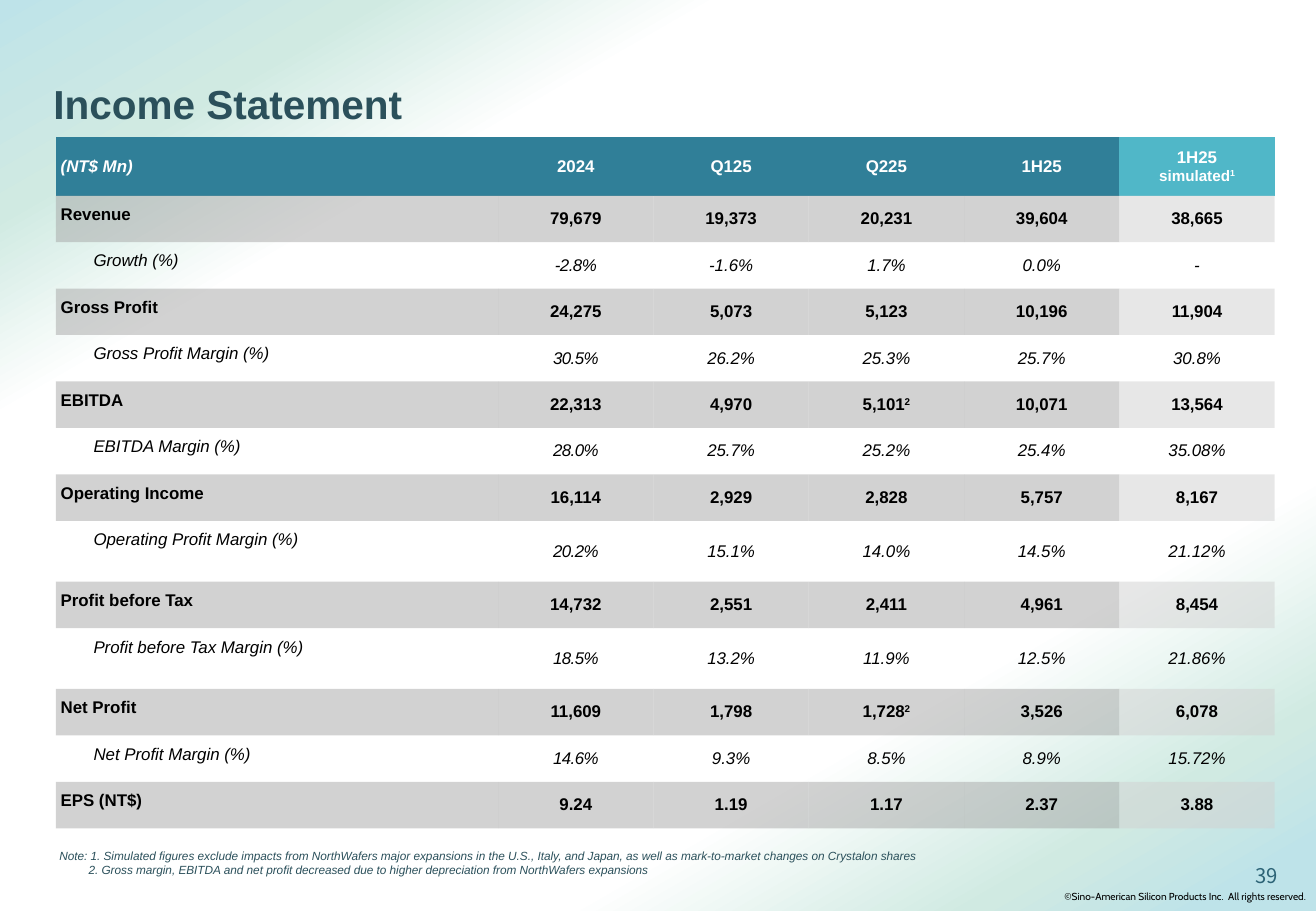
from dataclasses import dataclass

from lxml.etree import SubElement
from pptx import Presentation
from pptx.dml.color import RGBColor
from pptx.enum.shapes import MSO_SHAPE
from pptx.enum.text import MSO_ANCHOR as Anchor, MSO_AUTO_SIZE as AutoSize, PP_ALIGN as Align
from pptx.oxml.ns import qn
from pptx.util import Emu, Pt

EMU_PER_PX = 9144
SLIDE_SIZE = (1083, 750)


@dataclass(frozen=True)
class Theme:
    font: str = "Arial"
    number_font: str = "Noto Sans CJK SC"
    copyright_font: str = "Cabin"
    ink: str = "2B505B"
    number_ink: str = "2C6376"
    black: str = "000000"
    white: str = "FFFFFF"
    header: str = "307F98"
    header_accent: str = "50B7C8"
    band: str = "A6A6A6"
    band_accent: str = "D1D1D1"
    title_size: int = 24
    number_size: int = 12
    table_size: int = 10
    simulated_size: int = 9
    note_size: int = 7
    copyright_size: int = 6
    gradient: tuple = ((0, "BEE3E9"), (13, "D0EAE2"), (25, "FFFFFF"),
                       (74, "FFFFFF"), (88, "D0EAE2"), (96, "BEE3E9"))


THEME = Theme()
PLAIN_TABLE_STYLE = "{2D5ABB26-0587-4C30-8999-92F81FD0307C}"
TABLE_BOX = (46, 113, 1003, 569)
LABEL_WIDTH = 364
HEADER_HEIGHT, TALL_HEIGHT = 48, 50
TALL_ROWS = (8, 10)
LABEL_MARGINS = (4, 8, 4, 8)
MARGIN_LABEL_MARGINS = (31, 8, 4, 8)
VALUE_MARGINS = (0, 0, 0, 0)

HEADINGS = ["(NT$ Mn)", "2024", "Q125", "Q225", "1H25", "1H25"]
STATEMENT = [
    ["Revenue", "79,679", "19,373", "20,231", "39,604", "38,665"],
    ["Growth (%)", "-2.8%", "-1.6%", "1.7%", "0.0%", "-"],
    ["Gross Profit", "24,275", "5,073", "5,123", "10,196", "11,904"],
    ["Gross Profit Margin (%)", "30.5%", "26.2%", "25.3%", "25.7%", "30.8%"],
    ["EBITDA", "22,313", "4,970", "5,101^2", "10,071", "13,564"],
    ["EBITDA Margin (%)", "28.0%", "25.7%", "25.2%", "25.4%", "35.08%"],
    ["Operating Income", "16,114", "2,929", "2,828", "5,757", "8,167"],
    ["Operating Profit Margin (%)", "20.2%", "15.1%", "14.0%", "14.5%", "21.12%"],
    ["Profit before Tax", "14,732", "2,551", "2,411", "4,961", "8,454"],
    ["Profit before Tax Margin (%)", "18.5%", "13.2%", "11.9%", "12.5%", "21.86%"],
    ["Net Profit", "11,609", "1,798", "1,728^2", "3,526", "6,078"],
    ["Net Profit Margin (%)", "14.6%", "9.3%", "8.5%", "8.9%", "15.72%"],
    ["EPS (NT$)", "9.24", "1.19", "1.17", "2.37", "3.88"],
]
NOTES = [
    ("Note: 1. Simulated figures exclude impacts from NorthWafers major expansions in the U.S., "
     "Italy, and Japan, as well as mark-to-market changes on Crystalon shares", 0),
    ("2. Gross margin, EBITDA and net profit decreased due to higher depreciation "
     "from NorthWafers expansions", 24),
]


def px(length):
    return Emu(round(length * EMU_PER_PX))


def place(shape, box):
    shape.left, shape.top, shape.width, shape.height = map(px, box)


def set_margins(frame, margins):
    frame.margin_left, frame.margin_top, frame.margin_right, frame.margin_bottom = map(px, margins)


def add_run(paragraph, text, size, color, font=THEME.font, bold=False, italic=False):
    run = paragraph.add_run()
    run.text = text
    run.font.name = font
    run.font.size = Pt(size)
    run.font.bold = bold
    run.font.italic = italic
    run.font.color.rgb = RGBColor.from_string(color)
    return run


def add_marked_text(paragraph, text, size, color, **style):
    body, _, mark = text.partition("^")
    add_run(paragraph, body, size, color, **style)
    if mark:
        run = add_run(paragraph, mark, size, color, **style)
        run.font._element.set("baseline", "30000")


def add_text_box(slide, box, margins=(10, 5, 10, 5)):
    shape = slide.shapes.add_textbox(*map(px, box))
    frame = shape.text_frame
    frame.word_wrap = True
    set_margins(frame, margins)
    return frame


def add_backdrop(slide):
    shape = slide.shapes.add_shape(MSO_SHAPE.RECTANGLE, 0, 0, *map(px, SLIDE_SIZE))
    shape.shadow.inherit = False
    shape.line.fill.background()
    shape.fill.gradient()
    gradient = shape._element.spPr.find(qn("a:gradFill"))
    for child in list(gradient):
        gradient.remove(child)
    stops = SubElement(gradient, qn("a:gsLst"))
    for position, color in THEME.gradient:
        stop = SubElement(stops, qn("a:gs"), pos=str(position * 1000))
        SubElement(stop, qn("a:srgbClr"), val=color)
    SubElement(gradient, qn("a:lin"), ang=str(60 * 60000), scaled="0")
    slide.shapes._spTree.insert(2, shape._element)


def set_title(slide, text):
    title = slide.shapes.title
    place(title, (34, 45, 945, 85))
    frame = title.text_frame
    frame.auto_size = AutoSize.NONE
    frame.vertical_anchor = Anchor.MIDDLE
    paragraph = frame.paragraphs[0]
    paragraph.alignment = Align.LEFT
    paragraph.line_spacing = 0.9
    add_run(paragraph, text, THEME.title_size, THEME.ink, bold=True)


def fill_cell(cell, color, alpha=None):
    cell.fill.solid()
    cell.fill.fore_color.rgb = RGBColor.from_string(color)
    if alpha is not None:
        color_element = cell._tc.tcPr.find(qn("a:solidFill"))[0]
        SubElement(color_element, qn("a:alpha"), val=str(alpha * 1000))


def write_heading(cell, text, column):
    last = column == len(HEADINGS) - 1
    fill_cell(cell, THEME.header_accent if last else THEME.header)
    cell.vertical_anchor = Anchor.MIDDLE
    paragraph = cell.text_frame.paragraphs[0]
    add_run(paragraph, text, THEME.table_size, THEME.white, bold=True, italic=column == 0)
    if column == 0:
        set_margins(cell, LABEL_MARGINS)
    else:
        paragraph.alignment = Align.CENTER
    if last:
        second = cell.text_frame.add_paragraph()
        second.alignment = Align.CENTER
        add_marked_text(second, "simulated^1", THEME.simulated_size, THEME.white, bold=True)


def write_item(cell, text, column, is_margin):
    if is_margin:
        cell.fill.background()
    else:
        last = column == len(HEADINGS) - 1
        fill_cell(cell, THEME.band_accent if last else THEME.band, alpha=50)
    paragraph = cell.text_frame.paragraphs[0]
    if column == 0:
        set_margins(cell, MARGIN_LABEL_MARGINS if is_margin else LABEL_MARGINS)
    else:
        set_margins(cell, VALUE_MARGINS)
        cell.vertical_anchor = Anchor.MIDDLE
        paragraph.alignment = Align.CENTER
    add_marked_text(paragraph, text, THEME.table_size, THEME.black,
                    bold=not is_margin, italic=is_margin)
    if is_margin and column == 1:
        paragraph.runs[0].font._element.set("spc", "-30")


def add_statement_table(slide):
    row_count, column_count = len(STATEMENT) + 1, len(HEADINGS)
    frame = slide.shapes.add_table(row_count, column_count, *map(px, TABLE_BOX))
    table = frame.table
    table.horz_banding = False
    table._tbl.tblPr.find(qn("a:tableStyleId")).text = PLAIN_TABLE_STYLE
    width, height = TABLE_BOX[2:]
    value_width = (width - LABEL_WIDTH) / (column_count - 1)
    tall_total = TALL_HEIGHT * len(TALL_ROWS)
    row_height = (height - HEADER_HEIGHT - tall_total) / (row_count - 1 - len(TALL_ROWS))
    for index, column in enumerate(table.columns):
        column.width = px(value_width if index else LABEL_WIDTH)
    for index, row in enumerate(table.rows):
        row.height = px(TALL_HEIGHT if index in TALL_ROWS else row_height if index else HEADER_HEIGHT)
    for column, text in enumerate(HEADINGS):
        write_heading(table.cell(0, column), text, column)
    for row, items in enumerate(STATEMENT, start=1):
        for column, text in enumerate(items):
            write_item(table.cell(row, column), text, column, is_margin=row % 2 == 0)


def add_notes(slide):
    frame = add_text_box(slide, (39, 694, 736, 45))
    for index, (text, indent) in enumerate(NOTES):
        paragraph = frame.add_paragraph() if index else frame.paragraphs[0]
        paragraph._p.get_or_add_pPr().set("marL", str(px(indent)))
        add_run(paragraph, text, THEME.note_size, THEME.ink, italic=True)


def add_footer(slide):
    paragraph = add_text_box(slide, (864, 723, 260, 23), (12, 5, 10, 5)).paragraphs[0]
    paragraph.line_spacing = 1.5
    add_run(paragraph, "©Sino-American Silicon Products Inc.  All rights reserved.",
            THEME.copyright_size, THEME.black, THEME.copyright_font)
    paragraph = add_text_box(slide, (1023, 706, 65, 50)).paragraphs[0]
    add_run(paragraph, "39", THEME.number_size, THEME.number_ink, THEME.number_font)


def main():
    presentation = Presentation()
    presentation.slide_width, presentation.slide_height = map(px, SLIDE_SIZE)
    slide = presentation.slides.add_slide(presentation.slide_layouts[5])
    add_backdrop(slide)
    set_title(slide, "Income Statement")
    add_statement_table(slide)
    add_notes(slide)
    add_footer(slide)
    presentation.save("out.pptx")


if __name__ == "__main__":
    main()
